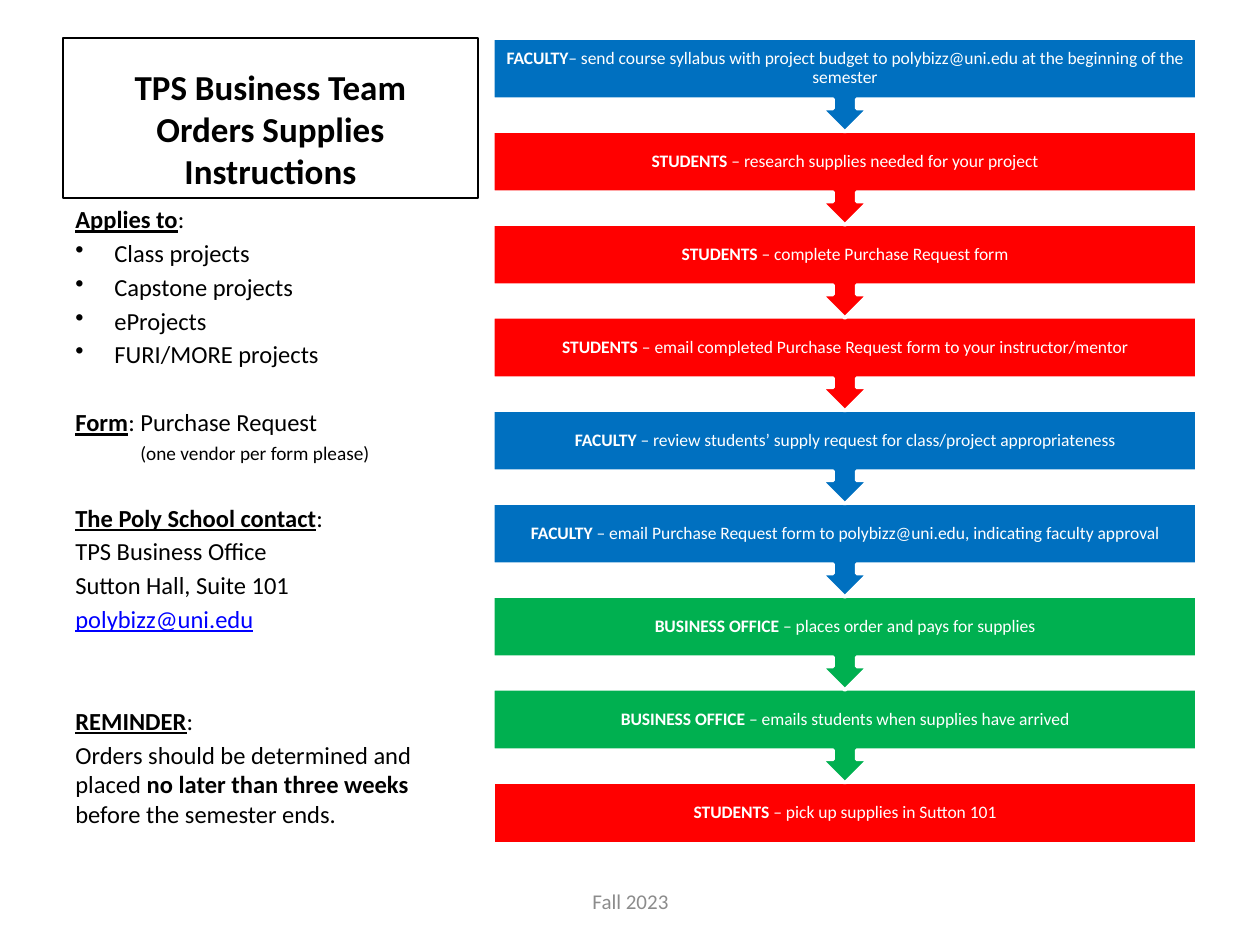
from pptx import Presentation
from pptx.dml.color import RGBColor
from pptx.enum.shapes import MSO_SHAPE
from pptx.enum.text import MSO_ANCHOR, PP_ALIGN
from pptx.oxml.xmlchemy import OxmlElement
from pptx.util import Pt

PX = 914400 / 126
RECT, CALLOUT = MSO_SHAPE.RECTANGLE, MSO_SHAPE.DOWN_ARROW_CALLOUT
LEFT, CENTER = PP_ALIGN.LEFT, PP_ALIGN.CENTER
TOP, MIDDLE, BOTTOM = MSO_ANCHOR.TOP, MSO_ANCHOR.MIDDLE, MSO_ANCHOR.BOTTOM
BLACK, WHITE, GREY, LINK = "000000", "FFFFFF", "8C8C8C", "0000FF"
BLUE, RED, GREEN = "0070C0", "FF0000", "00B050"

prs = Presentation()
prs.slide_width, prs.slide_height = round(1260 * PX), round(945 * PX)
slide = prs.slides.add_slide(prs.slide_layouts[6])


def add(kind, x, y, w, h, fill=None, line=None, width=2, anchor=TOP, pad=None):
    """Add a shape, or a text box when kind is None, and return it."""
    place = [round(n * PX) for n in (x, y, w, h)]
    if kind is None:
        shape = slide.shapes.add_textbox(*place)
    else:
        shape = slide.shapes.add_shape(kind, *place)
        shape.shadow.inherit = False
        if fill:
            shape.fill.solid()
            shape.fill.fore_color.rgb = RGBColor.from_string(fill)
        else:
            shape.fill.background()
        shape.line.color.rgb = RGBColor.from_string(line)
        shape.line.width = Pt(width)
    frame = shape.text_frame
    frame.word_wrap = True
    frame.vertical_anchor = anchor
    if pad:
        frame.margin_left = frame.margin_right = round(pad * PX)
        frame.margin_top = frame.margin_bottom = round(pad * PX)
    return shape


def write(shape, *runs, size=14, color=BLACK, align=LEFT, before=0,
          space=1.0, indent=0, bullet=False):
    """Add a paragraph of (text, marks) runs; marks hold b for bold, u for underline."""
    frame = shape.text_frame
    para = frame.paragraphs[0] if not frame.text else frame.add_paragraph()
    para.alignment, para.line_spacing = align, space
    para.space_before = Pt(before)
    props = para._p.get_or_add_pPr()
    left = round(indent * PX)
    props.set("marL", str(left))
    props.set("indent", str(-left if bullet else 0))
    if bullet:
        mark = OxmlElement("a:buChar")
        mark.set("char", "•")
        props.append(mark)
    for text, marks in runs:
        run = para.add_run()
        run.text = text
        font = run.font
        font.name, font.size = "Calibri", Pt(size)
        font.bold, font.underline = "b" in marks, "u" in marks
        font.color.rgb = RGBColor.from_string(color)


# Title
title = add(RECT, 63, 38, 415, 160, line=BLACK, width=1.5, anchor=BOTTOM)
for text in ("TPS Business Team", "Orders Supplies", "Instructions"):
    write(title, (text, "b"), size=20, align=CENTER)

# Steps, last one first so that each arrow lies over the next box
steps = [
    (BLUE, "FACULTY", "– send course syllabus with project budget to polybizz@uni.edu"
                      " at the beginning of the semester"),
    (RED, "STUDENTS", " – research supplies needed for your project"),
    (RED, "STUDENTS", " – complete Purchase Request form"),
    (RED, "STUDENTS", " – email completed Purchase Request form to your instructor/mentor"),
    (BLUE, "FACULTY", " – review students’ supply request for class/project appropriateness"),
    (BLUE, "FACULTY", " – email Purchase Request form to polybizz@uni.edu,"
                      " indicating faculty approval"),
    (GREEN, "BUSINESS OFFICE", " – places order and pays for supplies"),
    (GREEN, "BUSINESS OFFICE", " – emails students when supplies have arrived"),
    (RED, "STUDENTS", " – pick up supplies in Sutton 101"),
]
last = len(steps) - 1
for i, (fill, who, task) in reversed(list(enumerate(steps))):
    kind, high = (RECT, 62) if i == last else (CALLOUT, 94)
    step = add(kind, 493, 38 + 93 * i, 704, high, fill=fill, line=WHITE,
               anchor=MIDDLE, pad=10)
    write(step, (who, "b"), (task, ""), size=10, color=WHITE, align=CENTER, space=0.9)

# Notes on the left
GAP, BREAK, WIDE = 2.5, 22, 41.5
notes = add(None, 63, 198, 415, 646)
write(notes, ("Applies to", "bu"), (":", ""))
for text in ("Class projects", "Capstone projects", "eProjects", "FURI/MORE projects"):
    write(notes, (text, ""), before=GAP, indent=39, bullet=True)
write(notes, ("Form", "bu"), (": Purchase Request", ""), before=BREAK)
write(notes, ("(one vendor per form please)", ""), size=11, before=GAP, indent=65)
write(notes, ("The Poly School contact", "bu"), (":", ""), before=BREAK)
for text in ("TPS Business Office", "Sutton Hall, Suite 101"):
    write(notes, (text, ""), before=GAP)
write(notes, ("polybizz@uni.edu", "u"), color=LINK, before=GAP)
write(notes, ("REMINDER", "bu"), (":", ""), before=WIDE)
write(notes, ("Orders should be determined and placed ", ""),
      ("no later than three weeks ", "b"), ("before the semester ends.", ""), before=GAP)

# Footer
footer = add(None, 431, 876, 399, 50, anchor=MIDDLE)
write(footer, ("Fall 2023", ""), size=12, color=GREY, align=CENTER)

prs.save("out.pptx")
